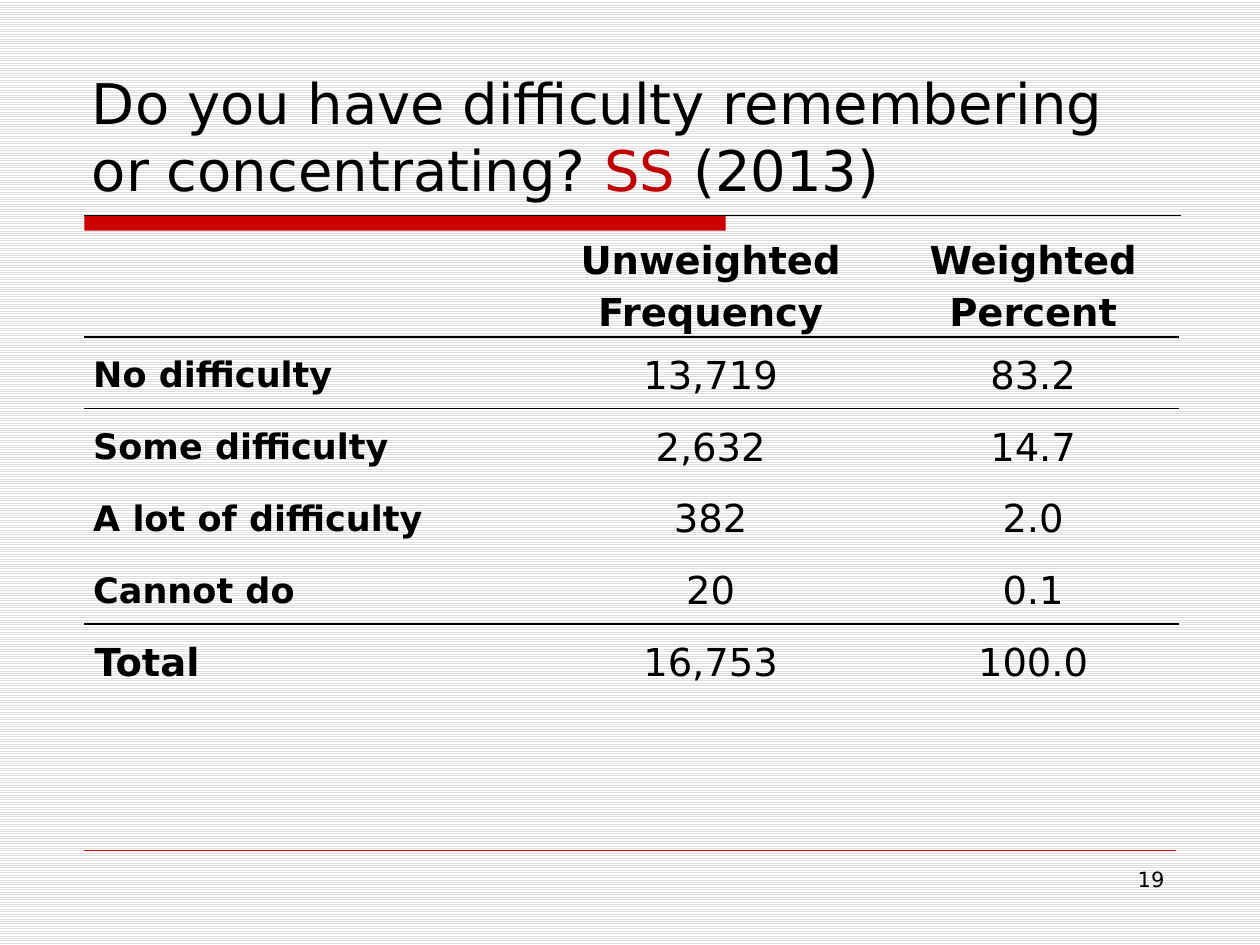
from lxml import etree
from pptx import Presentation
from pptx.dml.color import RGBColor
from pptx.enum.dml import MSO_PATTERN
from pptx.enum.shapes import MSO_CONNECTOR, MSO_SHAPE
from pptx.enum.text import MSO_ANCHOR, MSO_AUTO_SIZE, PP_ALIGN
from pptx.oxml import parse_xml
from pptx.oxml.ns import nsdecls, qn
from pptx.util import Inches, Pt

FONT = "DejaVu Sans"
BLACK, RED, DARK_RED = "000000", "CC0000", "C00000"
NO_STYLE_NO_GRID = "{2D5ABB26-0587-4C30-8999-92F81FD0307C}"


def color(hex_string):
    return RGBColor.from_string(hex_string)


def format_runs(paragraph, size, bold=False):
    for run in paragraph.runs:
        run.font.name = FONT
        run.font.size = Pt(size)
        run.font.bold = bold
        run.font.color.rgb = color(BLACK)


prs = Presentation()
prs.slide_width, prs.slide_height = Inches(10), Inches(7.5)
slide = prs.slides.add_slide(prs.slide_layouts[5])

background = slide.background.fill
background.patterned()
background.pattern = MSO_PATTERN.LIGHT_HORIZONTAL
background.fore_color.rgb = color("DDDDDD")
background.back_color.rgb = color("FFFFFF")

# Title rule and footer rule
title_bar = slide.shapes.add_shape(
    MSO_SHAPE.RECTANGLE, Inches(0.67), Inches(1.71), Inches(5.09), Inches(0.12))
title_bar.shadow.inherit = False
title_bar.fill.solid()
title_bar.fill.fore_color.rgb = color(RED)
title_bar.line.fill.background()

for right, y, line_color, width in [(9.37, 1.71, BLACK, 0.75), (9.33, 6.75, RED, 0.25)]:
    rule = slide.shapes.add_connector(
        MSO_CONNECTOR.STRAIGHT, Inches(0.67), Inches(y), Inches(right), Inches(y))
    rule.line.color.rgb = color(line_color)
    rule.line.width = Pt(width)
    etree.SubElement(rule._element.spPr, qn("a:effectLst"))

# Title
title = slide.shapes.title
title.left, title.top = Inches(0.63), Inches(0.33)
title.width, title.height = Inches(8.75), Inches(1.33)
title.text_frame.auto_size = MSO_AUTO_SIZE.NONE
title.text_frame.vertical_anchor = MSO_ANCHOR.BOTTOM
question = title.text_frame.paragraphs[0]
question.alignment = PP_ALIGN.LEFT
for part in ["Do you have difficulty remembering or concentrating? ", "SS", " (2013)"]:
    question.add_run().text = part
format_runs(question, 32)
question.runs[1].font.color.rgb = color(DARK_RED)

# Slide number
page_number = slide.shapes.add_textbox(
    Inches(7.17), Inches(6.83), Inches(2.17), Inches(0.52)).text_frame
page_number.word_wrap = True
page_number.text = "19"
page_number.paragraphs[0].alignment = PP_ALIGN.RIGHT
format_runs(page_number.paragraphs[0], 12)

# Frequency table
answers = [
    ["", "Unweighted\nFrequency", "Weighted Percent"],
    ["No difficulty", "13,719", "83.2"],
    ["Some difficulty", "2,632", "14.7"],
    ["A lot of difficulty", "382", "2.0"],
    ["Cannot do", "20", "0.1"],
    ["Total", "16,753", "100.0"],
]
total_row = len(answers) - 1
ruled_below = (0, total_row - 1)
ruled_above = (1, total_row)

table = slide.shapes.add_table(
    len(answers), 3, Inches(0.67), Inches(1.83), Inches(8.69), Inches(3.69)).table
table._tbl.tblPr.find(qn("a:tableStyleId")).text = NO_STYLE_NO_GRID
table.horz_banding = False
for column, width in zip(table.columns, [3.57, 2.8, 2.32]):
    column.width = Inches(width)

for r, answer in enumerate(answers):
    table.rows[r].height = Inches(0.84 if r == 0 else 0.57)
    for c, value in enumerate(answer):
        cell = table.cell(r, c)
        is_answer_label = c == 0 and 0 < r < total_row
        cell.text = value
        cell.vertical_anchor = MSO_ANCHOR.MIDDLE
        cell.margin_left = cell.margin_right = Inches(0.07 if is_answer_label else 0.08)
        cell.margin_top = cell.margin_bottom = 0
        for paragraph in cell.text_frame.paragraphs:
            paragraph.alignment = PP_ALIGN.LEFT if c == 0 else PP_ALIGN.CENTER
            paragraph.line_spacing = 1.15
            format_runs(paragraph, 20 if is_answer_label else 22, r == 0 or c == 0)
        for edge, ruled_rows in [("lnT", ruled_above), ("lnB", ruled_below)]:
            if r in ruled_rows:
                cell._tc.get_or_add_tcPr().append(parse_xml(
                    f'<a:{edge} {nsdecls("a")} w="{Pt(1)}"><a:solidFill>'
                    f'<a:srgbClr val="{BLACK}"/></a:solidFill></a:{edge}>'))
        cell.fill.background()

prs.save("out.pptx")
